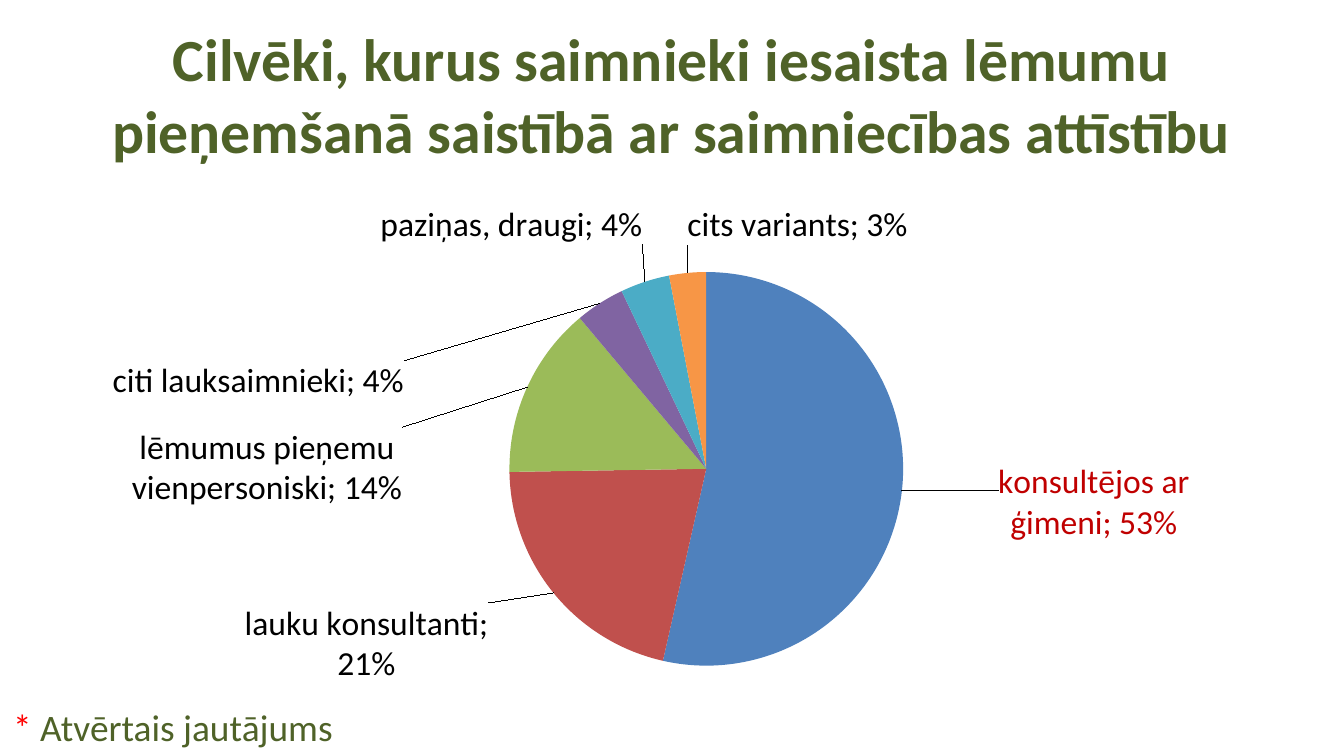
from lxml import etree
from pptx import Presentation
from pptx.chart.data import CategoryChartData
from pptx.dml.color import RGBColor
from pptx.enum.chart import XL_CHART_TYPE, XL_LABEL_POSITION
from pptx.enum.text import MSO_ANCHOR, PP_ALIGN
from pptx.oxml.ns import qn
from pptx.util import Cm, Pt

PIE = XL_CHART_TYPE.PIE
OUT = XL_LABEL_POSITION.OUTSIDE_END
MID, TOP = MSO_ANCHOR.MIDDLE, MSO_ANCHOR.TOP
LEFT, CENTER = PP_ALIGN.LEFT, PP_ALIGN.CENTER

FONT = "Calibri"
GREEN, RED, BLACK = "4F6228", "FF0000", "000000"
TITLE = ("Cilvēki, kurus saimnieki iesaista lēmumu "
         "pieņemšanā saistībā ar saimniecības attīstību")
NOTE = [("*", RED), (" Atvērtais jautājums", GREEN)]
# answer, percent, slice colour, label shift as a share of the chart
SLICES = [
    ("konsultējos ar ģimeni", 53, "4F81BD", (0.06, -0.06)),
    ("lauku konsultanti", 21, "C0504D", (-0.04, 0.01)),
    ("lēmumus pieņemu vienpersoniski", 14, "9BBB59", (-0.08, 0.25)),
    ("citi lauksaimnieki", 4, "8064A2", (-0.13, 0.21)),
    ("paziņas, draugi", 4, "4BACC6", (0, -0.06)),
    ("cits variants", 3, "F79646", (0.15, -0.04)),
]
FAMILY = ("konsultējos ar ģimeni; 53%", "C00000")
PLOT = {"x": 0.34, "y": 0.15, "w": 0.33, "h": 0.79}


def rgb(code):
    return RGBColor.from_string(code)


def style(font, size, color, bold=False):
    font.name, font.size, font.bold = FONT, Pt(size), bold
    font.color.rgb = rgb(color)


def add_text(slide, box, runs, size, align, anchor, bold=False):
    frame = slide.shapes.add_textbox(*map(Cm, box)).text_frame
    frame.word_wrap, frame.vertical_anchor = True, anchor
    para = frame.paragraphs[0]
    para.alignment = align
    for text, color in runs:
        run = para.add_run()
        run.text = text
        style(run.font, size, color, bold)


def make_layout(parts):
    """Build a c:layout element from (tag, value) pairs."""
    layout = etree.Element(qn("c:layout"))
    manual = etree.SubElement(layout, qn("c:manualLayout"))
    for tag, val in parts:
        etree.SubElement(manual, qn("c:" + tag)).set("val", str(val))
    return layout


def place_plot(chart):
    area = chart._chartSpace.find(".//" + qn("c:plotArea"))
    for old in area.findall(qn("c:layout")):
        area.remove(old)
    modes = [("layoutTarget", "inner"), ("xMode", "edge"), ("yMode", "edge")]
    area.insert(0, make_layout(modes + list(PLOT.items())))


def add_label(series, idx, shift):
    label = series.points[idx].data_label
    if idx == 0:
        text, color = FAMILY
        run = label.text_frame.paragraphs[0].add_run()
        run.text = text
        style(run.font, 18, color)
    else:
        style(label.font, 18, BLACK)
    label.position = OUT
    node = series._element.findall(".//" + qn("c:dLbl"))[idx]
    node.find(qn("c:idx")).addnext(make_layout(zip("xy", shift)))
    flags = {"showVal": "0", "showCatName": "1", "showPercent": "1"}
    for tag, val in flags.items():
        node.find(qn("c:" + tag)).set("val", val)
    etree.SubElement(node, qn("c:separator")).text = "; "


def add_pie(slide, box):
    data = CategoryChartData()
    data.categories = [name for name, *_ in SLICES]
    data.add_series("Series 1", [val for _, val, *_ in SLICES])
    chart = slide.shapes.add_chart(PIE, *map(Cm, box), data).chart
    chart.has_legend = chart.has_title = False
    style(chart.font, 18, BLACK)
    place_plot(chart)
    plot = chart.plots[0]
    plot.vary_by_categories = True
    series = plot.series[0]
    labels = series.data_labels
    labels.show_value = False
    labels.show_category_name = labels.show_percentage = True
    for idx, (_, _, color, shift) in enumerate(SLICES):
        fill = series.points[idx].format.fill
        fill.solid()
        fill.fore_color.rgb = rgb(color)
        add_label(series, idx, shift)


def main():
    deck = Presentation()
    deck.slide_width, deck.slide_height = Cm(25.4), Cm(14.29)
    slide = deck.slides.add_slide(deck.slide_layouts[6])
    add_text(slide, (1.27, 0.58, 22.86, 2.39), [(TITLE, GREEN)], 32,
             CENTER, MID, True)
    add_pie(slide, (-0.71, 3.73, 27.84, 9.42))
    add_text(slide, (0, 13.18, 19.81, 1.11), NOTE, 20, LEFT, TOP)
    deck.save("out.pptx")


if __name__ == "__main__":
    main()
